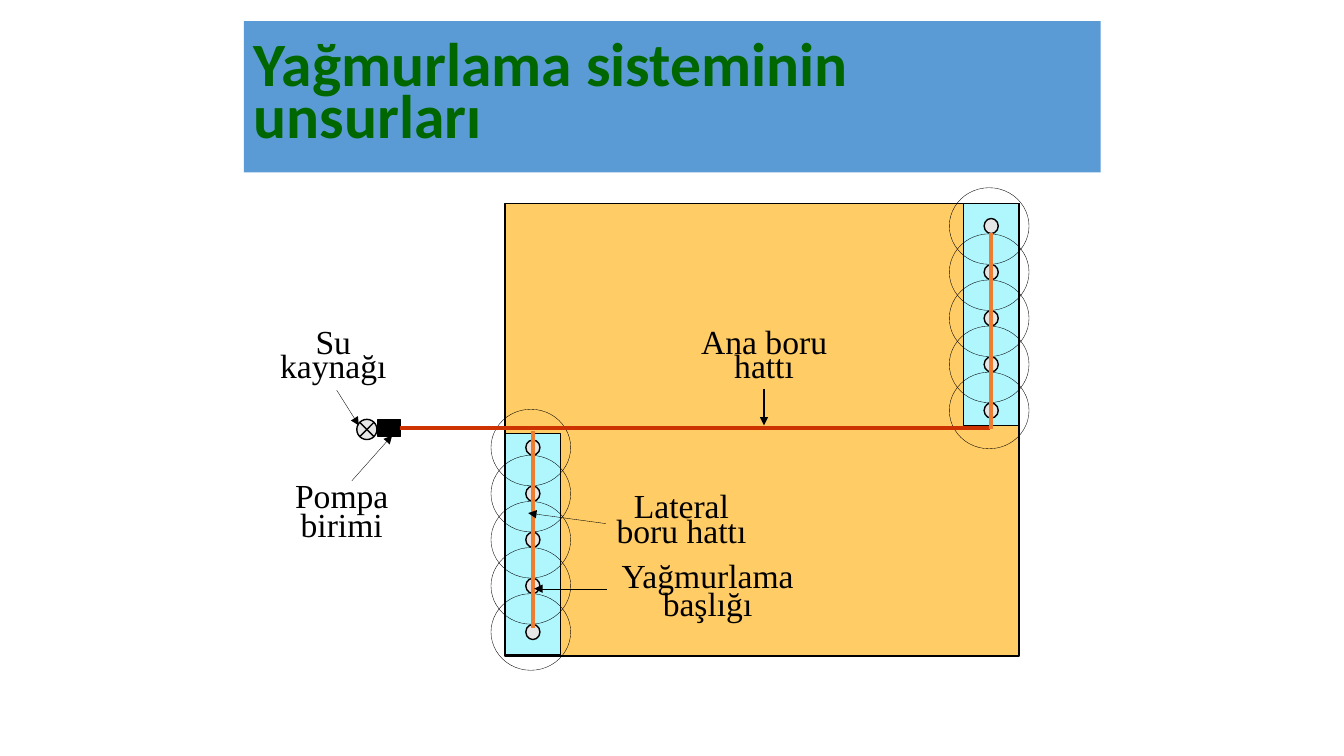
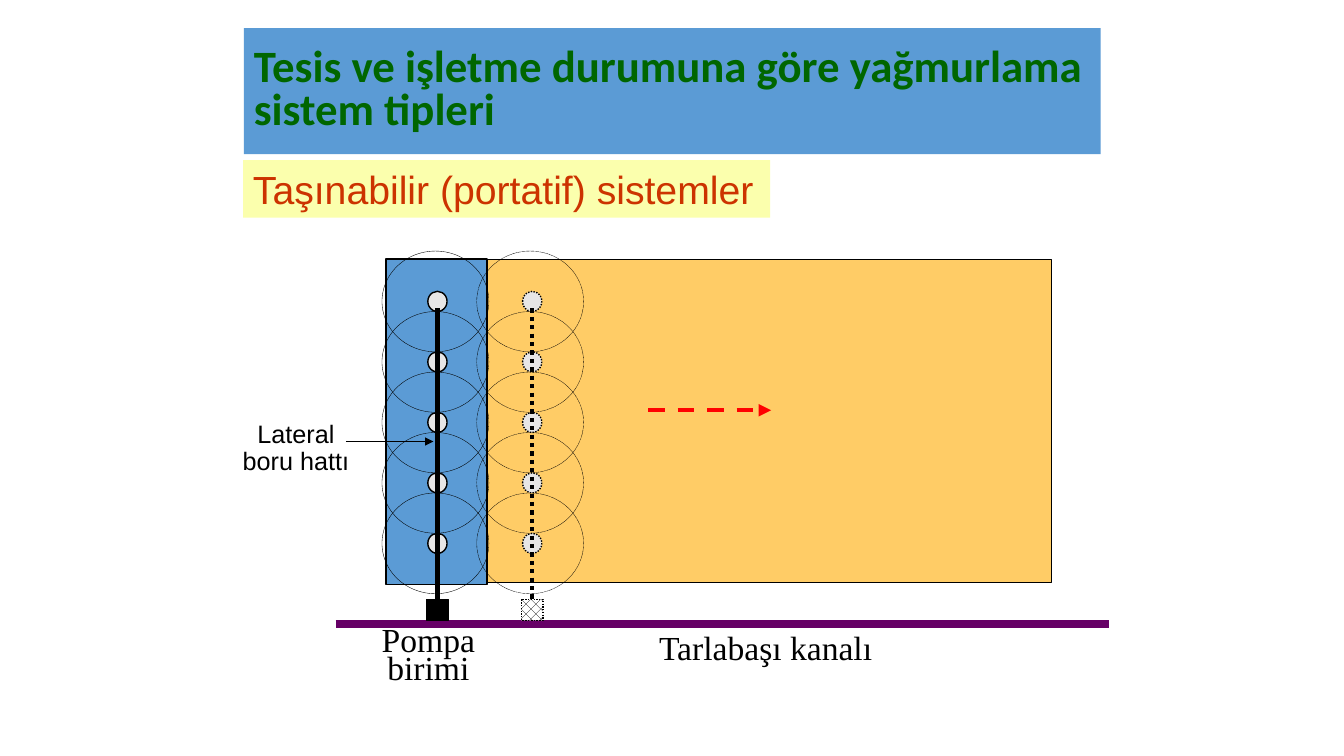
from dataclasses import dataclass

from pptx import Presentation
from pptx.dml.color import RGBColor
from pptx.enum.dml import MSO_LINE, MSO_PATTERN
from pptx.enum.shapes import MSO_CONNECTOR, MSO_SHAPE
from pptx.enum.text import MSO_ANCHOR, PP_ALIGN
from pptx.oxml.ns import qn
from pptx.util import Inches, Pt

RECT, CIRCLE = MSO_SHAPE.RECTANGLE, MSO_SHAPE.FLOWCHART_CONNECTOR
JUNCTION = MSO_SHAPE.FLOWCHART_SUMMING_JUNCTION
DOTS, DASHES = MSO_LINE.ROUND_DOT, MSO_LINE.DASH
STRAIGHT = MSO_CONNECTOR.STRAIGHT
CROSSED = MSO_PATTERN.PERCENT_30
LEFT, CENTER = PP_ALIGN.LEFT, PP_ALIGN.CENTER
TOP, MIDDLE = MSO_ANCHOR.TOP, MSO_ANCHOR.MIDDLE
TOP_SIDE, LEFT_SIDE, BOTTOM_SIDE, RIGHT_SIDE = range(4)


@dataclass(frozen=True)
class Theme:
    black: str = "000000"
    white: str = "FFFFFF"
    band: str = "5B9BD5"
    title: str = "006600"
    field: str = "FFCC66"
    wetted: str = "AFF6FD"
    head: str = "E7E6E6"
    lateral: str = "ED7D31"
    main: str = "CC3300"
    canal: str = "660066"
    motion: str = "FF0000"
    note: str = "FBFFAD"
    hairline: float = 0.25
    thin: float = 1
    pipe: float = 3
    thick: float = 6
    title_size: int = 44
    long_title_size: int = 32
    note_size: int = 28
    label_size: int = 24
    small_size: int = 18


T = Theme()
TITLE = dict(name="Calibri", size=Pt(T.title_size), bold=True, color=T.title)
LONG_TITLE = TITLE | dict(size=Pt(T.long_title_size))
LABEL = dict(name="Times New Roman", size=Pt(T.label_size), color=T.black)
SMALL = dict(name="Arial", size=Pt(T.small_size), color=T.black)
NOTE = dict(name="Arial", size=Pt(T.note_size), color=T.main)

deck = Presentation()
deck.slide_width, deck.slide_height = Inches(13.33), Inches(7.5)
# All places and sizes are percentages of the slide's width and height.
X, Y = deck.slide_width / 100, deck.slide_height / 100


def block(slide, box, kind=RECT, fill=None, edge=None, dash=None, text="",
          font=LABEL, spacing=1.0, align=CENTER, anchor=MIDDLE, wrap=False):
    """Add a shape, or a text box if kind is None; edge is the outline width."""
    place = [round(n * unit) for n, unit in zip(box, (X, Y, X, Y))]
    if kind is None:
        shape = slide.shapes.add_textbox(*place)
    else:
        shape = slide.shapes.add_shape(kind, *place)
        shape.shadow.inherit = False
    if fill:
        shape.fill.solid()
        shape.fill.fore_color.rgb = RGBColor.from_string(fill)
    else:
        shape.fill.background()
    if edge:
        shape.line.color.rgb = RGBColor.from_string(T.black)
        shape.line.width = Pt(edge)
        if dash:
            shape.line.dash_style = dash
    else:
        shape.line.fill.background()
    if text:
        frame = shape.text_frame
        frame.word_wrap, frame.vertical_anchor = wrap, anchor
        frame.text = text
        for paragraph in frame.paragraphs:
            paragraph.alignment, paragraph.line_spacing = align, spacing
            for run in paragraph.runs:
                for name, value in font.items():
                    if name == "color":
                        run.font.color.rgb = RGBColor.from_string(value)
                    else:
                        setattr(run.font, name, value)
    return shape


def line(slide, start, end, color=T.black, width=T.hairline, dash=None, arrow=False):
    """Add a straight line; an end is a point or a (shape, side) pair to join."""
    link = slide.shapes.add_connector(STRAIGHT, 0, 0, 0, 0)
    if isinstance(start[0], (int, float)):
        link.begin_x, link.begin_y = round(start[0] * X), round(start[1] * Y)
    else:
        link.begin_connect(*start)
    if isinstance(end[0], (int, float)):
        link.end_x, link.end_y = round(end[0] * X), round(end[1] * Y)
    else:
        link.end_connect(*end)
    link.line.color.rgb = RGBColor.from_string(color)
    link.line.width = Pt(width)
    if dash:
        link.line.dash_style = dash
    properties = link._element.spPr
    if arrow:
        outline = properties.find(qn("a:ln"))
        outline.append(outline.makeelement(qn("a:tailEnd"), {"type": "triangle"}))
    properties.append(properties.makeelement(qn("a:effectLst"), {}))


# Titles
elements, portable = [deck.slides.add_slide(deck.slide_layouts[6]) for _ in range(2)]
for slide, text, top, height, font, spacing in (
    (elements, "Yağmurlama sisteminin\vunsurları", 2.8, 20, TITLE, 0.7),
    (portable, "Tesis ve işletme durumuna göre yağmurlama sistem tipleri", 3.73, 16.67,
     LONG_TITLE, 0.8),
):
    block(slide, (18.15, top, 63.75, height), fill=T.band, text=text, align=LEFT,
          font=font, spacing=spacing, wrap=True)
block(portable, (18.08, 21.2, 39.23, 7.6), fill=T.note, font=NOTE,
      text="Taşınabilir (portatif) sistemler", align=LEFT, anchor=TOP)

# Fields and the strips being watered
for slide, box, fill, edge in (
    (elements, (37.58, 26.93, 38.25, 59.87), T.field, T.thin),
    (elements, (71.7, 26.93, 4.13, 29.33), T.wetted, T.thin),
    (elements, (37.58, 57.33, 4.13, 29.33), T.wetted, T.thin),
    (portable, (29.03, 34.27, 49.2, 42.8), T.field, T.hairline),
    (portable, (28.73, 34.27, 7.5, 43.07), T.band, T.thin),
):
    block(slide, box, fill=fill, edge=edge)

# Labels
source_label, pump_label, main_label, lateral_label, head_label, canal_label, stand_label = [
    block(slide, box, None, text=text, spacing=spacing)
    for slide, text, box, spacing in (
        (elements, "Su\nkaynağı", (20.03, 43.6, 9.53, 7.87), 0.6),
        (elements, "Pompa\nbirimi", (21.15, 63.6, 8.55, 8.93), 0.7),
        (elements, "Ana boru\nhattı", (51.4, 43.6, 10.9, 7.87), 0.6),
        (elements, "Lateral\nboru hattı", (45.08, 65.33, 11.25, 7.87), 0.6),
        (elements, "Yağmurlama\nbaşlığı", (45.45, 74.13, 14.4, 8.93), 0.7),
        (portable, "Tarlabaşı kanalı", (48.23, 82.13, 17.48, 6.8), 1.0),
        (portable, "Pompa\nbirimi", (27.6, 82.53, 8.55, 8.93), 0.7),
    )
]
block(portable, (17.25, 55.07, 9.53, 8.67), None, text="Lateral\nboru hattı",
      font=SMALL, spacing=0.9, anchor=TOP)

# Sprinklers: five heads per lateral, each with its wetted circle
HEADS = 5
SPRAY_SHIFT = -0.15
for slide, middle, first, pitch, spray, head, dash in (
    (elements, 73.75, 29.9, 6.1, (5.93, 10.13), (1.05, 2), None),
    (elements, 39.65, 59.2, 6.1, (5.93, 10.13), (1.05, 2), None),
    (portable, 32.55, 39.87, 8, (7.95, 13.33), (1.43, 2.67), None),
    (portable, 39.6, 39.87, 8, (7.95, 13.33), (1.43, 2.67), DOTS),
):
    for row in range(HEADS):
        center = first + row * pitch
        for (width, height), shift, fill, edge in (
            (spray, SPRAY_SHIFT, None, T.hairline),
            (head, 0, T.head, T.thin),
        ):
            box = (middle + shift - width / 2, center - height / 2, width, height)
            block(slide, box, CIRCLE, fill, edge, dash)

# First slide: water source, pump and pipes
MAIN_Y = 56.6
block(elements, (26.55, 55.47, 1.5, 2.67), JUNCTION, T.head, T.thin)
pump = block(elements, (28.13, MAIN_Y - 1.13, 1.65, 2.26), fill=T.black, edge=T.thin)
line(elements, (39.65, 57.07), (39.65, 83.07), T.lateral, T.pipe)
line(elements, (pump, RIGHT_SIDE), (73.65, MAIN_Y), T.main, T.pipe)
line(elements, (73.75, 30.8), (73.75, 56.8), T.lateral, T.pipe)
for start, end, width in (
    ((25.05, 51.6), (26.7, 56.27), T.hairline),
    ((26.18, 63.6), (29.18, 57.6), T.hairline),
    ((main_label, BOTTOM_SIDE), (56.85, 56.27), T.thin),
    ((lateral_label, LEFT_SIDE), (39.3, 67.87), T.hairline),
    ((45.15, 77.87), (39.75, 77.87), T.hairline),
):
    line(elements, start, end, width=width, arrow=True)

# Second slide: canal, pump positions and direction of travel
line(portable, (24.98, 82.53), (82.5, 82.53), T.canal, T.thick)
line(portable, (48.23, 54.27), (57.38, 54.27), T.motion, T.pipe, DASHES, arrow=True)
for middle, dash in ((32.55, None), (39.6, DOTS)):
    pump = block(portable, (middle - 0.82, 79.27, 1.64, 2.8), fill=T.black, edge=T.thin, dash=dash)
    if dash:
        pump.fill.patterned()
        pump.fill.pattern = CROSSED
        pump.fill.fore_color.rgb = RGBColor.from_string(T.black)
        pump.fill.back_color.rgb = RGBColor.from_string(T.white)
    line(portable, (middle, 40.8), (pump, TOP_SIDE), width=T.pipe, dash=dash)
line(portable, (25.73, 58.4), (32.25, 58.4), width=T.thin, arrow=True)

deck.save("out.pptx")
